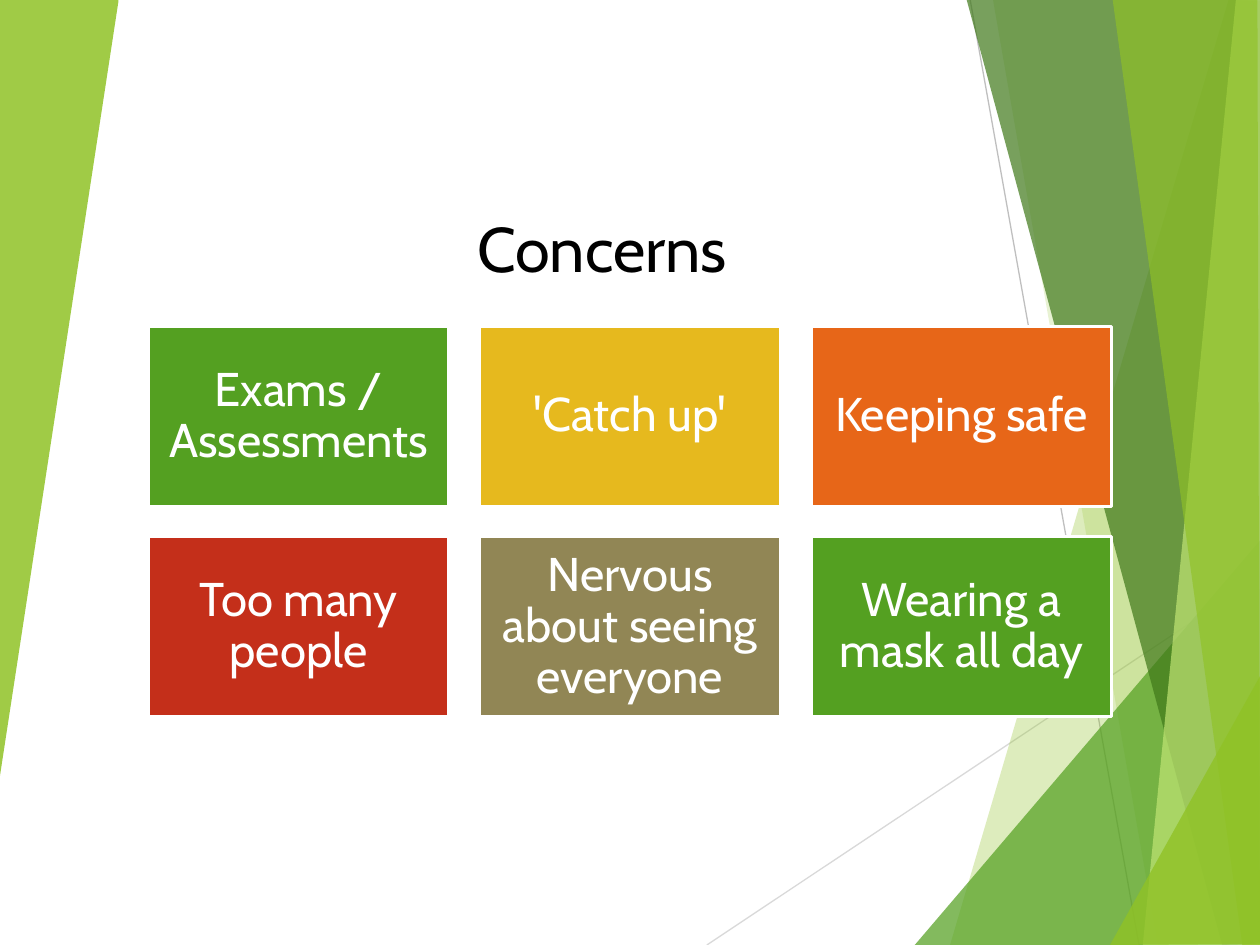
from lxml import etree
from pptx import Presentation
from pptx.dml.color import RGBColor
from pptx.enum.shapes import MSO_CONNECTOR, MSO_SHAPE
from pptx.enum.text import MSO_ANCHOR, MSO_AUTO_SIZE, PP_ALIGN
from pptx.oxml.ns import qn
from pptx.util import Inches, Pt

LINE = MSO_CONNECTOR.STRAIGHT
RECT = MSO_SHAPE.RECTANGLE
MIDDLE, BOTTOM = MSO_ANCHOR.MIDDLE, MSO_ANCHOR.BOTTOM
CENTER = PP_ALIGN.CENTER
FIXED = MSO_AUTO_SIZE.NONE

FONT = "Cabin"
COLORS = {
    "black": "000000", "white": "FFFFFF", "pale": "D9D9D9", "gray": "BFBFBF",
    "lime": "90C226", "light": "C0E474", "green": "54A021", "dark": "3F7819",
    "gold": "E6B91E", "orange": "E76618", "red": "C42F1A", "olive": "918655",
}

RAYS = [
    ((5.61, 7.5), (10.01, 4.57), "pale"),
    ((7.7, 0), (9.04, 7.5), "gray"),
]
# Corner points, colour, opacity in percent
FACETS = [
    ([(9.75, 0), (7.54, 7.5), (10.02, 7.51), (10.01, 0.01)], "lime", 30),
    ([(7.88, -0.01), (9.19, 7.5), (10.01, 7.5), (10.01, -0.01)], "lime", 20),
    ([(7.26, 7.5), (10, 4.29), (10.01, 7.5)], "green", 72),
    ([(7.67, -0.01), (9.7, 7.5), (10.01, 7.49), (10.01, -0.01)], "dark", 70),
    ([(9.81, -0.01), (9.07, 7.5), (10.01, 7.5), (10, -0.01)], "light", 70),
    ([(8.83, -0.01), (9.86, 7.5), (10, 7.5), (9.98, -0.01)], "lime", 65),
    ([(8.81, 7.5), (10.01, 5.35), (10.01, 7.49)], "lime", 80),
    ([(-0.01, 0), (0.94, -0.01), (0.94, 0.01), (-0.01, 6.22)], "lime", 85),
]
CARDS = [
    ("Exams / Assessments", "green"),
    ("'Catch up'", "gold"),
    ("Keeping safe", "orange"),
    ("Too many people", "red"),
    ("Nervous about seeing everyone", "olive"),
    ("Wearing a mask all day", "green"),
]
COLS = 3
LEFT, TOP = 1.18, 2.59
WIDE, HIGH = 2.38, 1.43
GAP_X, GAP_Y = 0.25, 0.24


def rgb(name):
    return RGBColor.from_string(COLORS[name])


def add_ray(slide, start, end, color):
    ends = [Inches(n) for n in start + end]
    ray = slide.shapes.add_connector(LINE, *ends)
    ray.line.color.rgb = rgb(color)
    ray.line.width = Pt(0.75)
    etree.SubElement(ray._element.spPr, qn("a:effectLst"))


def add_facet(slide, points, color, alpha):
    first, *rest = [(Inches(x), Inches(y)) for x, y in points]
    pen = slide.shapes.build_freeform(*first)
    pen.add_line_segments(rest, close=True)
    facet = pen.convert_to_shape()
    facet.shadow.inherit = False
    facet.line.fill.background()
    facet.fill.solid()
    facet.fill.fore_color.rgb = rgb(color)
    tint = facet._element.spPr.find(qn("a:solidFill"))[0]
    etree.SubElement(tint, qn("a:alpha"), val=str(alpha * 1000))


def set_text(shape, text, size, color, anchor, pad_x, pad_y):
    frame = shape.text_frame
    frame.text = text
    frame.word_wrap = True
    frame.auto_size = FIXED
    frame.vertical_anchor = anchor
    frame.margin_left = frame.margin_right = Inches(pad_x)
    frame.margin_top = frame.margin_bottom = Inches(pad_y)
    para = frame.paragraphs[0]
    para.alignment = CENTER
    para.line_spacing = 0.9
    para.space_before = Pt(0)
    para.font.name = FONT
    para.font.size = Pt(size)
    para.font.color.rgb = rgb(color)


def add_title(slide, text):
    title = slide.shapes.title
    title.left, title.top = Inches(0.65), Inches(1.25)
    title.width, title.height = Inches(8.26), Inches(1.06)
    set_text(title, text, 36, "black", BOTTOM, 0.07, 0.04)


def add_card(slide, index, text, color):
    row, col = divmod(index, COLS)
    x = LEFT + col * (WIDE + GAP_X)
    y = TOP + row * (HIGH + GAP_Y)
    card = slide.shapes.add_shape(
        RECT, Inches(x), Inches(y), Inches(WIDE), Inches(HIGH))
    card.shadow.inherit = False
    card.fill.solid()
    card.fill.fore_color.rgb = rgb(color)
    card.line.color.rgb = rgb("white")
    card.line.width = Pt(1.5)
    set_text(card, text, 27, "white", MIDDLE, 0.11, 0.11)


def main():
    deck = Presentation()
    deck.slide_width, deck.slide_height = Inches(10), Inches(7.5)
    slide = deck.slides.add_slide(deck.slide_layouts[5])
    for ray in RAYS:
        add_ray(slide, *ray)
    for facet in FACETS:
        add_facet(slide, *facet)
    add_title(slide, "Concerns")
    for index, card in enumerate(CARDS):
        add_card(slide, index, *card)
    deck.save("out.pptx")


if __name__ == "__main__":
    main()
